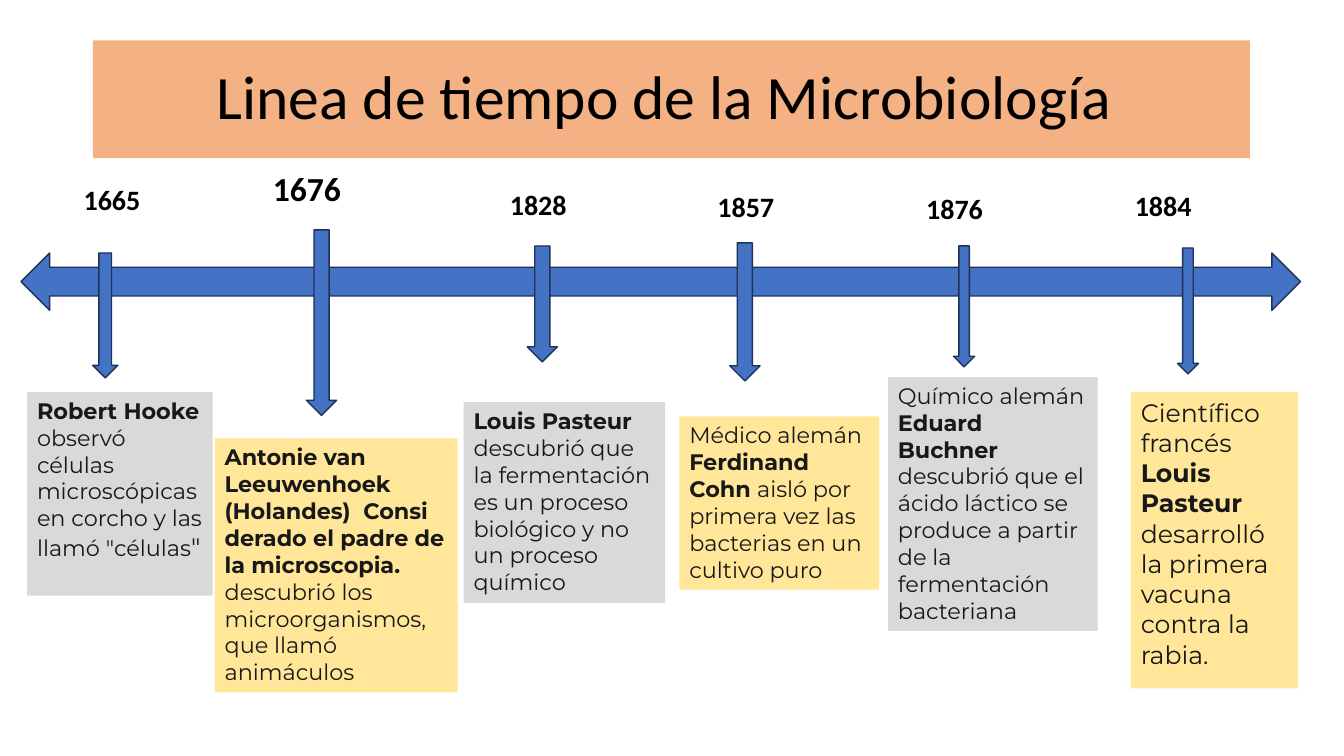
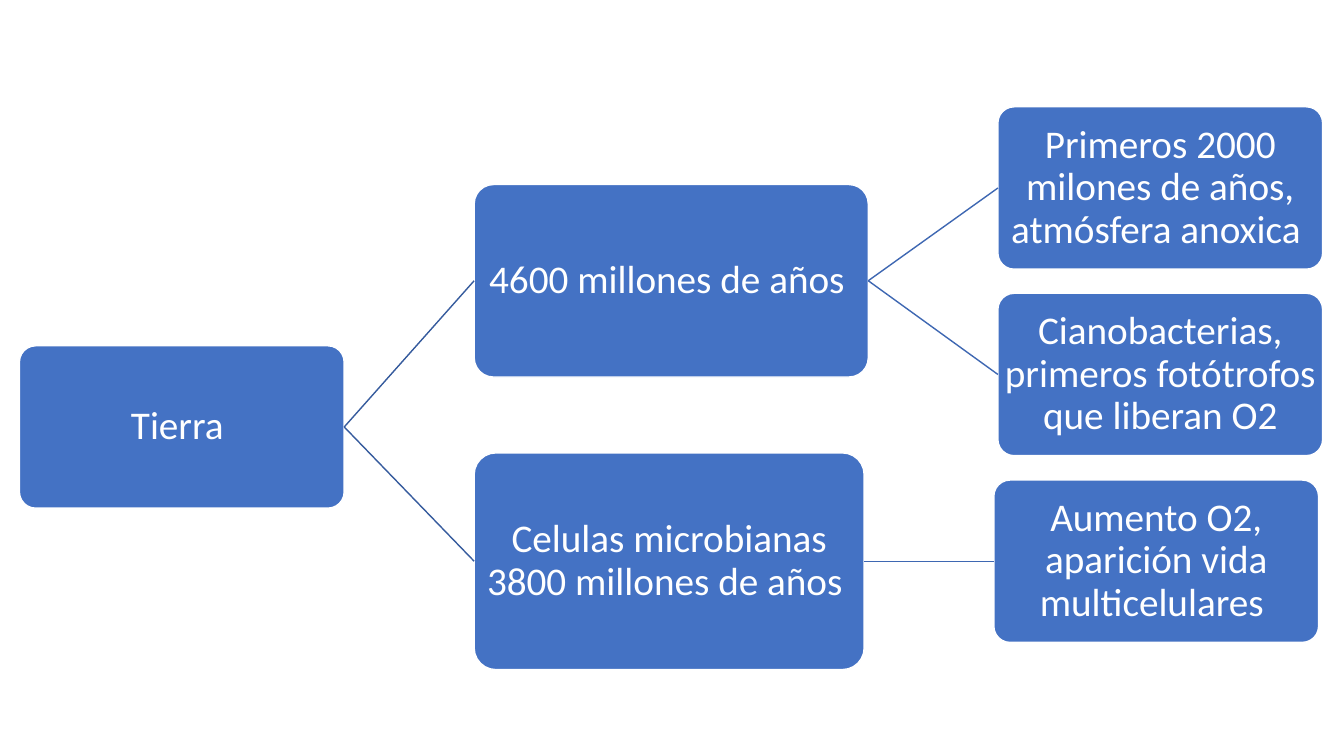
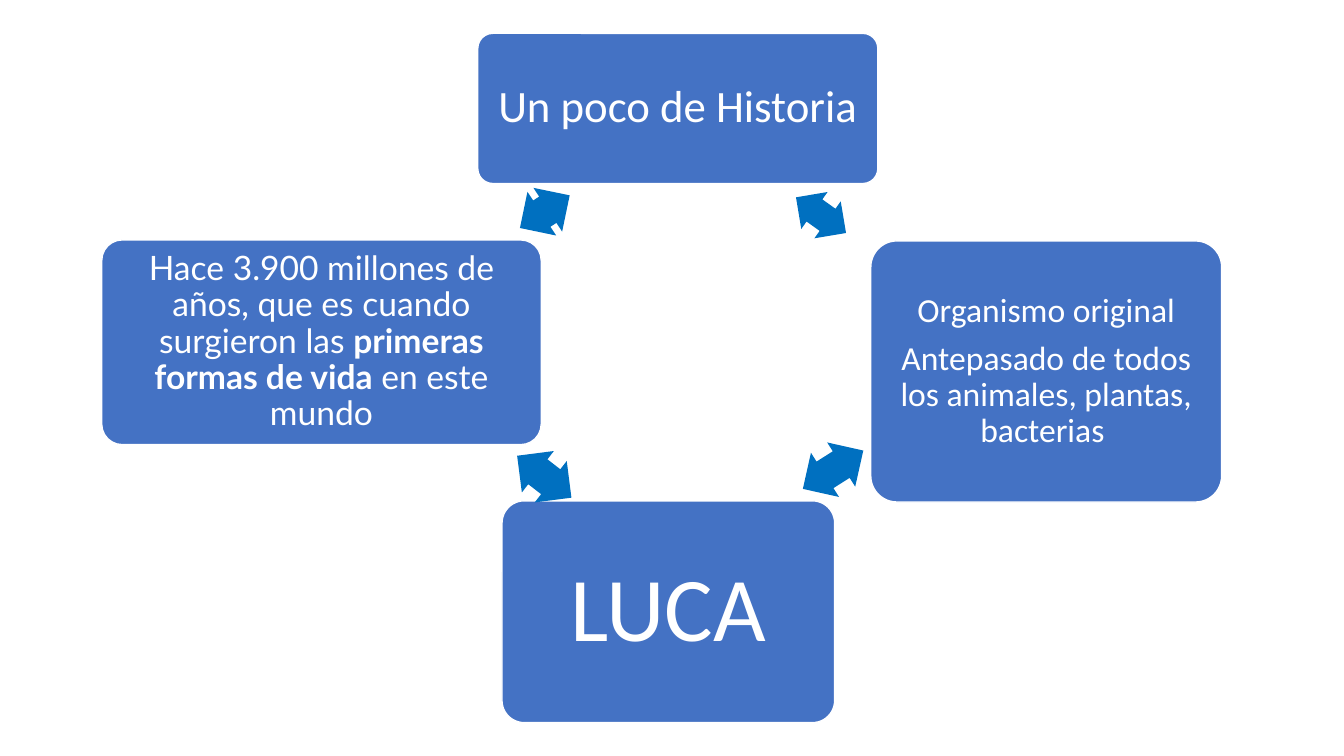
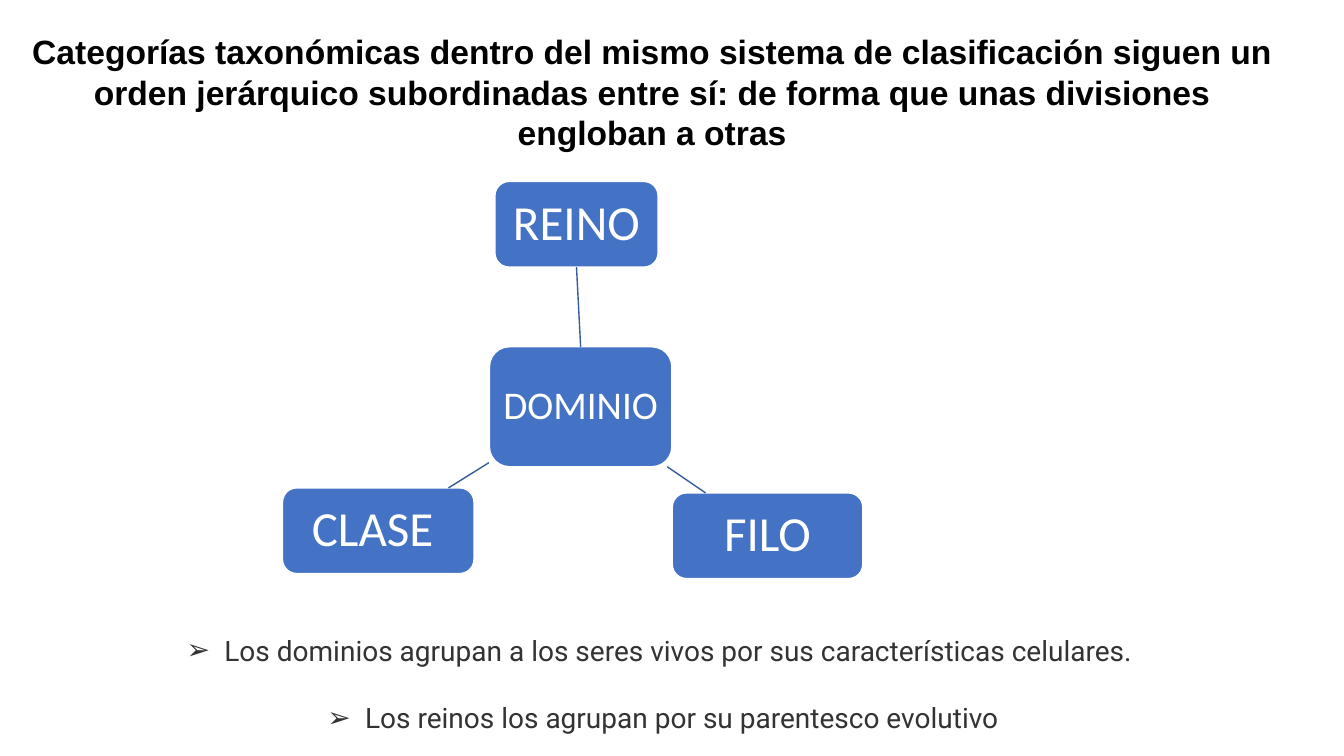
"""Builds four slides on the history and classification of microorganisms."""
from lxml import etree
from pptx import Presentation
from pptx.dml.color import RGBColor
from pptx.enum import shapes, text
from pptx.oxml import ns
from pptx.util import Pt

BLUE, DARK_BLUE, ARROW_BLUE = "4472C4", "1E3256", "0070C0"
LINK_BLUE, LEAF_BLUE = "365B9D", "3E67B2"
ORANGE, GRAY, YELLOW = "F4B183", "D9D9D9", "FFE699"
WHITE, BLACK, INK, SOFT_INK = "FFFFFF", "000000", "181818", "333333"
hex_color = RGBColor.from_string
SHAPE, ALIGN, ANCHOR = shapes.MSO_SHAPE, text.PP_ALIGN, text.MSO_ANCHOR
TOP, LEFT, BOTTOM, RIGHT = range(4)


def draw(slide, kind, area, fill, line=None):
    """Adds a flat preset shape; area is left, top, width, height in points."""
    shape = slide.shapes.add_shape(kind, *map(Pt, area))
    shape.shadow.inherit = False
    shape.fill.solid()
    shape.fill.fore_color.rgb = hex_color(fill)
    if line:
        shape.line.color.rgb = hex_color(line)
        shape.line.width = Pt(1)
    else:
        shape.line.fill.background()
    return shape


def write(frame, lines, size, font, color, align=ALIGN.LEFT, anchor=ANCHOR.TOP, spacing=1.0):
    """Fills a text frame; asterisks switch bold on and off."""
    frame.word_wrap = True
    frame.auto_size = text.MSO_AUTO_SIZE.NONE
    frame.vertical_anchor = anchor
    frame.text = "\n".join(lines)
    for paragraph, line in zip(frame.paragraphs, lines):
        paragraph.text = ""
        paragraph.alignment = align
        paragraph.line_spacing = spacing
        for index, piece in enumerate(line.split("*")):
            if piece:
                run = paragraph.add_run()
                run.text = piece
                run.font.size = Pt(size)
                run.font.name = font
                run.font.bold = index % 2 == 1
                run.font.color.rgb = hex_color(color)


deck = Presentation()
deck.slide_width, deck.slide_height = Pt(960), Pt(540)
title_only, blank = deck.slide_layouts[5], deck.slide_layouts[6]
timeline, earth, origin, taxonomy = [
    deck.slides.add_slide(layout) for layout in (title_only, blank, blank, title_only)
]

heading = timeline.shapes.title
heading.left, heading.top, heading.width, heading.height = map(Pt, (66.3, 28.8, 826.5, 84.2))
heading.fill.solid()
heading.fill.fore_color.rgb = hex_color(ORANGE)
write(heading.text_frame, ["Linea de tiempo de la Microbiología "], 44, "Calibri", BLACK,
      ALIGN.CENTER, ANCHOR.MIDDLE, 0.9)

draw(timeline, SHAPE.LEFT_RIGHT_ARROW, (15, 180.7, 914, 41), BLUE, DARK_BLUE)
milestones = [
    ("1665", 20, (52.6, 126.7, 87, 31.7), (66.2, 180.7, 18, 89.3),
     (19.4, 280, 132.5, 145.4), GRAY, 16,
     ['*Robert Hooke *observó células microscópicas en corcho y las llamó "células**"']),
    ("1676", 24, (187.9, 116.6, 95.8, 36), (218.9, 164.2, 21.6, 132.5),
     (153.4, 313.2, 173.5, 181.4), YELLOW, 16,
     ["*Antonie van Leeuwenhoek (Holandes)  Consi*",
      "*derado el padre de la microscopia.*",
      "descubrió los microorganismos, que llamó animáculos"]),
    ("1828", 20, (357.1, 130.3, 92.2, 31.7), (376.6, 175.7, 21.6, 82.8),
     (331.2, 287.3, 144, 143.3), GRAY, 16,
     ["*Louis Pasteur *descubrió que la fermentación es un proceso biológico "
      "y no un proceso químico"]),
    ("1857", 20, (505.4, 131.8, 88.6, 31.7), (521.3, 173.5, 21.6, 98.6),
     (485.3, 297.4, 142.6, 123.8), YELLOW, 16,
     ["Médico alemán *Ferdinand Cohn *aisló por primera vez las bacterias en un cultivo puro"]),
    ("1876", 20, (654.5, 133.2, 75.6, 31.7), (681.1, 175.7, 15.1, 86.4),
     (634.3, 269.3, 149.8, 181.4), GRAY, 16,
     ["Químico alemán *Eduard Buchner *descubrió que el ácido láctico se produce "
      "a partir de la fermentación bacteriana"]),
    ("1884", 20, (803.5, 131, 88.6, 32.4), (841, 177.1, 15.1, 90),
     (807.8, 280, 119.5, 211.7), YELLOW, 18,
     ["Científico francés *Louis Pasteur *desarrolló la primera vacuna contra la rabia."]),
]
stories = []
for year, year_size, year_area, arrow_area, story_area, fill, size, lines in milestones:
    draw(timeline, SHAPE.DOWN_ARROW, arrow_area, BLUE, DARK_BLUE)
    year_label = timeline.shapes.add_textbox(*map(Pt, year_area))
    write(year_label.text_frame, [f"*{year}*"], year_size, "Calibri", BLACK)
    story = draw(timeline, SHAPE.RECTANGLE, story_area, fill)
    write(story.text_frame, lines, size, "Montserrat", INK)
    stories.append(story)
closing_quote = stories[0].text_frame.paragraphs[0].runs[-1]
closing_quote.font.size = Pt(18)

heading = taxonomy.shapes.title
heading.left, heading.top, heading.width, heading.height = map(Pt, (4.3, 18.7, 923, 94.3))
write(heading.text_frame,
      ["*Categorías taxonómicas dentro del mismo sistema de clasificación siguen un orden "
       "jerárquico subordinadas entre sí: de forma que unas divisiones engloban a otras*"],
      24, "Arial", BLACK, ALIGN.CENTER)

topics = [
    (earth, "tierra", (13.9, 247, 232, 116), 28, 1.4, "Calibri", ["Tierra "]),
    (earth, "edad", (338.7, 131.8, 281.5, 137.5), 28, 1.4, "Calibri",
     ["4600 millones de años "]),
    (earth, "anoxica", (712.8, 76.3, 232, 116), 28, 1.4, "Calibri",
     ["Primeros 2000 milones de años, atmósfera anoxica "]),
    (earth, "cianobacterias", (712.8, 209.5, 232, 116), 28, 1.4, "Calibri",
     ["Cianobacterias, primeros fotótrofos que liberan O2"]),
    (earth, "celulas", (338.7, 323.5, 278.6, 154.8), 28, 1.4, "Calibri",
     ["Celulas microbianas 3800 millones de años "]),
    (earth, "aumento", (709.9, 342.9, 232, 116), 28, 1.4, "Calibri",
     ["Aumento O2, aparición vida multicelulares "]),
    (origin, "historia", (341.3, 23.8, 285.8, 107.3), 32, 9.4, "Calibri",
     ["Un poco de Historia"]),
    (origin, "organismo", (622, 172.1, 250.6, 186.5), 24, 7.2, "Calibri",
     ["Organismo original", "Antepasado de todos los animales, plantas, bacterias "]),
    (origin, "luca", (358.6, 357.8, 237.6, 158.4), 65, 19.4, "Calibri", ["LUCA"]),
    (origin, "vida", (72.7, 171.4, 313.9, 146.2), 24, 7.2, "Lato",
     ["Hace 3.900 millones de años, que es cuando surgieron las *primeras formas de vida* "
      "en este mundo"]),
    (taxonomy, "dominio", (349.6, 247.7, 130.3, 85.7), 28, 5.6, "Calibri", ["DOMINIO"]),
    (taxonomy, "reino", (353.5, 129.6, 116.6, 61.2), 35, 7, "Calibri", ["REINO"]),
    (taxonomy, "filo", (480.2, 352.1, 136.1, 61.2), 35, 7, "Calibri", ["FILO"]),
    (taxonomy, "clase", (201.8, 348.5, 136.8, 61.2), 35, 7, "Calibri", ["CLASE "]),
]
nodes = {}
for slide, topic, area, size, margin, font, lines in topics:
    node = draw(slide, SHAPE.ROUNDED_RECTANGLE, area, BLUE, WHITE)
    if slide is not taxonomy:
        node.adjustments[0] = 0.1
    frame = node.text_frame
    frame.margin_left = frame.margin_right = frame.margin_top = frame.margin_bottom = Pt(margin)
    write(frame, lines, size, font, WHITE, ALIGN.CENTER, ANCHOR.MIDDLE, 0.9)
    for paragraph in frame.paragraphs[:-1]:
        paragraph.space_after = Pt(size * 0.35)
    nodes[topic] = node

joints = [
    (earth, "tierra", RIGHT, "edad", LEFT, LINK_BLUE),
    (earth, "tierra", RIGHT, "celulas", LEFT, LINK_BLUE),
    (earth, "edad", RIGHT, "anoxica", LEFT, LEAF_BLUE),
    (earth, "edad", RIGHT, "cianobacterias", LEFT, LEAF_BLUE),
    (earth, "celulas", RIGHT, "aumento", LEFT, LEAF_BLUE),
    (taxonomy, "dominio", TOP, "reino", BOTTOM, LINK_BLUE),
]
branches = []
for slide, parent, parent_side, child, child_side, color in joints:
    branch = slide.shapes.add_connector(shapes.MSO_CONNECTOR.STRAIGHT, 0, 0, 0, 0)
    branch.begin_connect(nodes[parent], parent_side)
    branch.end_connect(nodes[child], child_side)
    branches.append((branch, color))
for ends in [(476.6, 333.4, 504, 352.1), (349.2, 330.5, 320.4, 348.5)]:
    branch = taxonomy.shapes.add_connector(shapes.MSO_CONNECTOR.STRAIGHT, *map(Pt, ends))
    branches.append((branch, LINK_BLUE))
for branch, color in branches:
    branch.line.color.rgb = hex_color(color)
    branch.line.width = Pt(1)
    etree.SubElement(branch._element.spPr, ns.qn("a:effectLst"))

cycle_arrows = [
    ((564.5, 137.5, 43.9, 32.4), 35.5),
    ((569.5, 316.8, 51.1, 37.4), 147.6),
    ((364.3, 321.8, 49, 37.4), 217.7),
    ((367.9, 132.5, 42.5, 37.4), 326.7),
]
for area, angle in cycle_arrows:
    cycle_arrow = draw(origin, SHAPE.LEFT_RIGHT_ARROW, area, ARROW_BLUE)
    cycle_arrow.adjustments[0] = 0.6
    cycle_arrow.adjustments[1] = 0.5
    cycle_arrow.rotation = angle

notes = taxonomy.shapes.add_textbox(*map(Pt, (19.4, 448.6, 908.6, 79.9))).text_frame
write(notes, ["Los dominios agrupan a los seres vivos por sus características celulares. ",
              "Los reinos los agrupan por su parentesco evolutivo"],
      20, "Roboto", SOFT_INK, ALIGN.CENTER)
notes.paragraphs[1].space_before = Pt(24.4)
for paragraph in notes.paragraphs:
    properties = paragraph._p.get_or_add_pPr()
    properties.set("marL", str(Pt(27)))
    properties.set("indent", str(-Pt(27)))
    etree.SubElement(properties, ns.qn("a:buFont"), typeface="Arial")
    etree.SubElement(properties, ns.qn("a:buChar"), char="➢")

deck.save("out.pptx")
